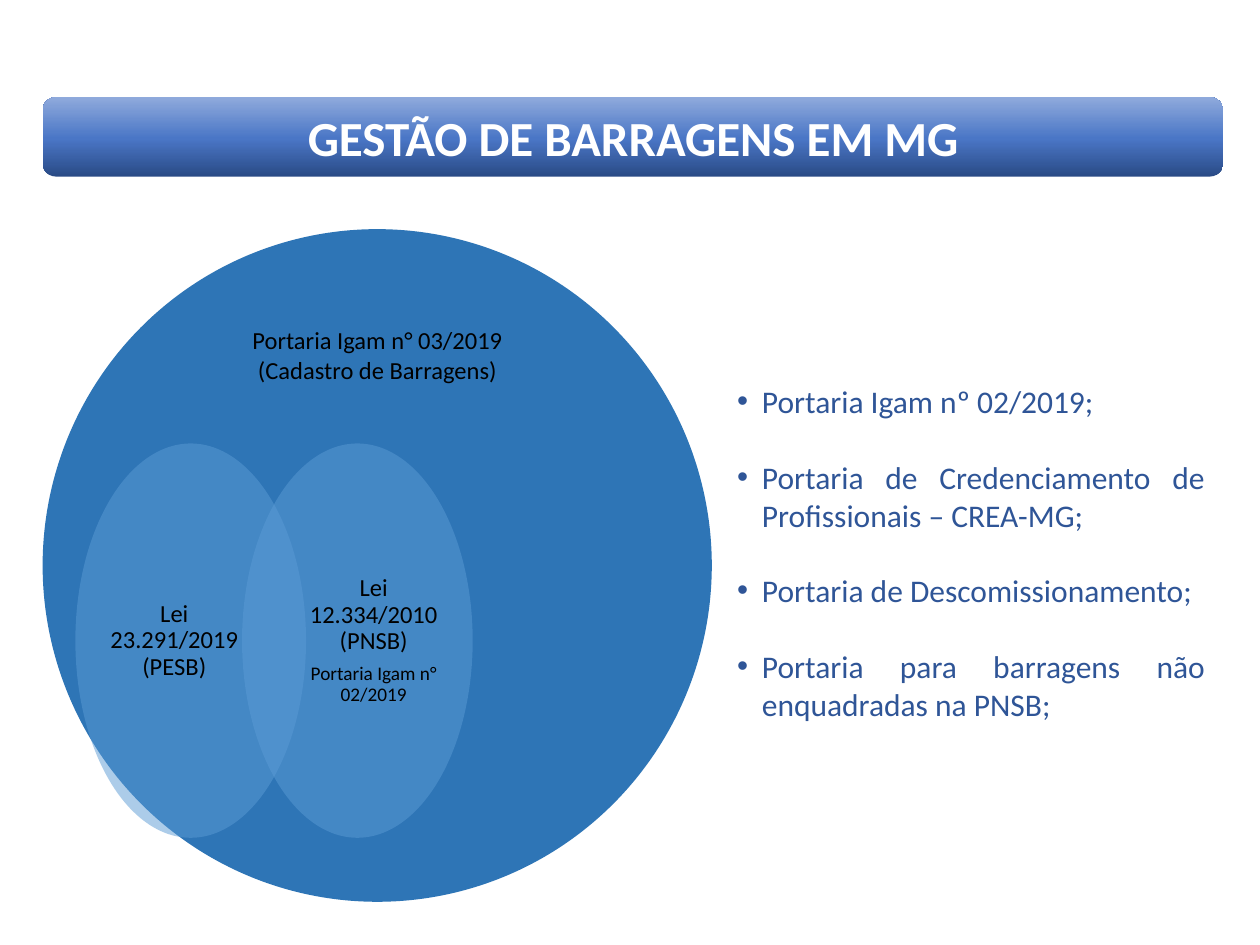
from copy import deepcopy
from lxml.etree import SubElement
from pptx import Presentation
from pptx.dml.color import RGBColor
from pptx.enum.shapes import MSO_SHAPE
from pptx.enum.text import MSO_ANCHOR, PP_ALIGN
from pptx.oxml.ns import qn
from pptx.util import Cm, Pt

COLORS = {
    "dark": "2A4B86", "mid": "4A76C6", "pale": "8FAADC",
    "disc": "2E75B6", "oval": "5B9BD5",
    "text": "000000", "list": "2F5597", "white": "FFFFFF",
}


class Deck:
    font = "Calibri"

    def __init__(self, wide, high):
        self.prs = Presentation()
        self.prs.slide_width, self.prs.slide_height = Cm(wide), Cm(high)
        self.slide = self.prs.slides.add_slide(self.prs.slide_layouts[5])

    def color(self, name):
        return RGBColor.from_string(COLORS[name])

    def shape(self, kind, box):
        shape = self.slide.shapes.add_shape(kind, *map(Cm, box))
        shape.shadow.inherit = False
        shape.line.fill.background()
        return shape

    def oval(self, kind, box, color, alpha=100):
        shape = self.shape(kind, box)
        shape.fill.solid()
        shape.fill.fore_color.rgb = self.color(color)
        if alpha < 100:
            tone = shape.fill._xPr.find(".//" + qn("a:srgbClr"))
            SubElement(tone, qn("a:alpha"), val=str(alpha * 1000))

    def band(self, box, names):
        shape = self.shape(MSO_SHAPE.ROUNDED_RECTANGLE, box)
        fill = shape.fill
        fill.gradient()
        fill.gradient_angle = 90
        stops = fill._xPr.find(".//" + qn("a:gsLst"))
        stops.append(deepcopy(stops[-1]))
        for stop, name, place in zip(fill.gradient_stops, names, (0, 0.48, 1)):
            stop.color.rgb = self.color(name)
            stop.position = place
        self.slide.shapes.title._element.addprevious(shape._element)

    def run(self, para, text, size, color, bold=False):
        run = para.add_run()
        run.text = text
        font = run.font
        font.name, font.size, font.bold = self.font, Pt(size), bold
        font.color.rgb = self.color(color)

    def title(self, box, text):
        title = self.slide.shapes.title
        title.left, title.top, title.width, title.height = map(Cm, box)
        title.text_frame.vertical_anchor = MSO_ANCHOR.MIDDLE
        para = title.text_frame.paragraphs[0]
        para.alignment = PP_ALIGN.CENTER
        self.run(para, text, 28, "white", True)

    def frame(self, box):
        frame = self.slide.shapes.add_textbox(*map(Cm, box)).text_frame
        frame.word_wrap = True
        return frame

    def paras(self, frame, count):
        return [frame.paragraphs[0]] + [frame.add_paragraph() for _ in range(count - 1)]

    def label(self, box, lines, tight=False):
        frame = self.frame(box)
        if tight:
            frame.vertical_anchor = MSO_ANCHOR.MIDDLE
            frame.margin_left = frame.margin_right = 0
            frame.margin_top = frame.margin_bottom = 0
        for para, (text, size) in zip(self.paras(frame, len(lines)), lines):
            para.alignment = PP_ALIGN.CENTER
            if tight:
                para.line_spacing = 0.9
                para.space_after = Pt(round(size * 0.35))
            self.run(para, text, size, "text")

    def bullets(self, box, items):
        for i, para in enumerate(self.paras(self.frame(box), len(items))):
            props = para._p.get_or_add_pPr()
            props.set("marL", str(Cm(0.73)))
            props.set("indent", str(-Cm(0.5)))
            SubElement(props, qn("a:buFont"), typeface="Arial")
            SubElement(props, qn("a:buChar"), char="•")
            para.alignment = PP_ALIGN.JUSTIFY
            if i:
                para.space_before = Pt(21.6)
            self.run(para, items[i], 18, "list")


def main():
    deck = Deck(25.4, 19.05)
    head = (0.86, 1.96, 23.8, 1.6)
    deck.band(head, ("dark", "mid", "pale"))
    deck.title(head, "GESTÃO DE BARRAGENS EM MG")

    deck.oval(MSO_SHAPE.FLOWCHART_CONNECTOR, (0.86, 4.62, 13.49, 13.56), "disc")
    laws = [
        (1.52, 2.18, [("Lei 23.291/2019 (PESB)", 14)]),
        (4.88, 6.2, [("Lei 12.334/2010 (PNSB)", 14),
                     ("Portaria Igam n° 02/2019", 11)]),
    ]
    for left, inner, lines in laws:
        deck.oval(MSO_SHAPE.OVAL, (left, 8.94, 4.65, 7.95), "oval", 50)
        deck.label((inner, 9.88, 2.67, 6.07), lines, True)
    deck.label((4.5, 6.43, 6.22, 1.45),
               [("Portaria Igam n° 03/2019 (Cadastro de Barragens)", 14)])

    deck.bullets((14.38, 7.58, 10.16, 7.19), [
        "Portaria Igam nº 02/2019;",
        "Portaria de Credenciamento de Profissionais – CREA-MG;",
        "Portaria de Descomissionamento;",
        "Portaria para barragens não enquadradas na PNSB;",
    ])
    deck.prs.save("out.pptx")


if __name__ == "__main__":
    main()
